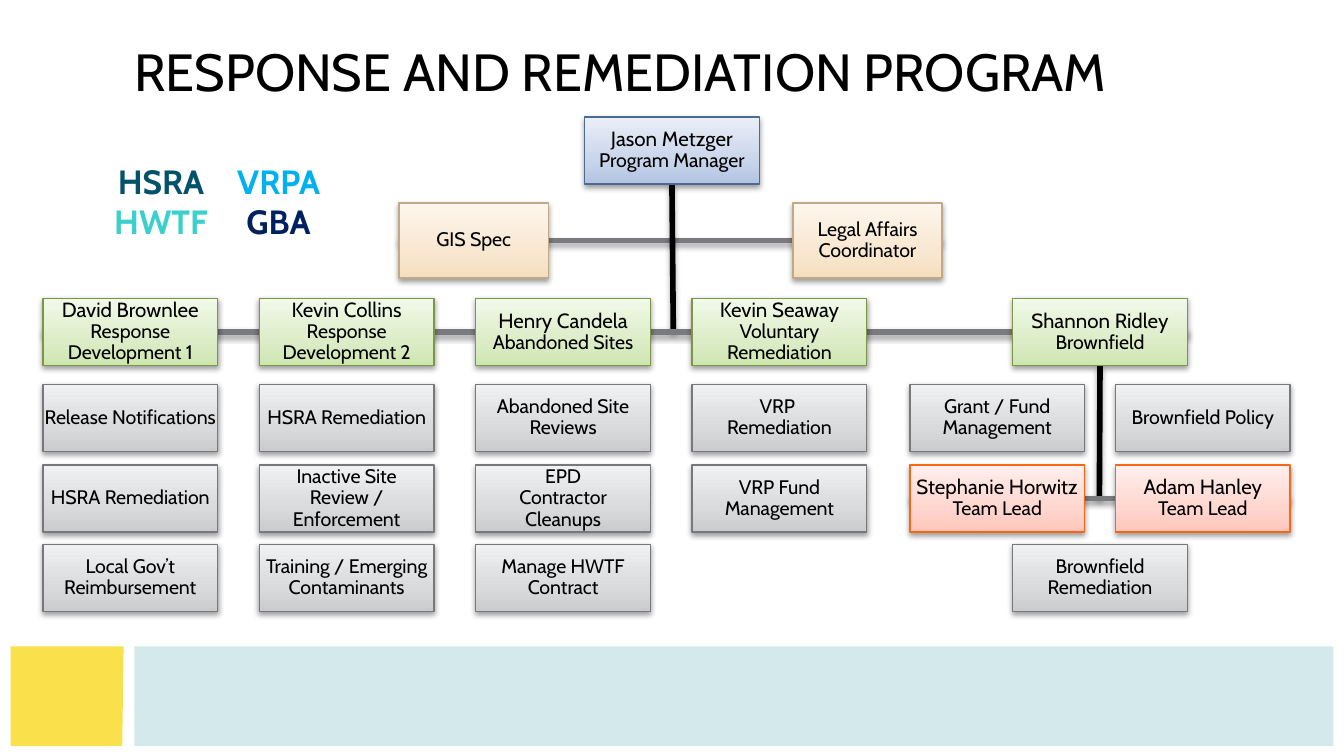
from lxml import etree
from pptx import Presentation
from pptx.dml.color import RGBColor
from pptx.enum.shapes import MSO_CONNECTOR, MSO_SHAPE
from pptx.enum.text import MSO_ANCHOR, PP_ALIGN
from pptx.oxml.ns import qn
from pptx.util import Inches, Pt

RECTANGLE, STRAIGHT = MSO_SHAPE.RECTANGLE, MSO_CONNECTOR.STRAIGHT
MIDDLE, CENTER, LEFT = MSO_ANCHOR.MIDDLE, PP_ALIGN.CENTER, PP_ALIGN.LEFT
LEFT_SIDE, BOTTOM_SIDE, RIGHT_SIDE = 1, 2, 3
FONT = "Cabin"

# Content
TITLE = "RESPONSE AND REMEDIATION PROGRAM"
FUNDS = [("HSRA", "04516C"), ("HWTF", "3CD0CC"), ("VRPA", "00B0F0"), ("GBA", "002060")]
MANAGER = ("Jason Metzger\n", "Program Manager")
STAFF = ["GIS Spec", "Legal Affairs Coordinator"]
UNITS = [
    (("David Brownlee ", "Response Development 1"),
     ["Release Notifications", "HSRA Remediation", "Local Gov’t Reimbursement"]),
    (("Kevin Collins ", "Response Development 2"),
     ["HSRA Remediation", "Inactive Site Review / Enforcement",
      "Training / Emerging Contaminants"]),
    (("Henry Candela ", "Abandoned Sites"),
     ["Abandoned Site Reviews", "EPD\nContractor\nCleanups", "Manage HWTF Contract"]),
    (("Kevin Seaway\n", "Voluntary Remediation"),
     ["VRP \nRemediation", "VRP Fund Management"]),
]
BROWNFIELD_HEAD = ("Shannon Ridley ", "Brownfield")
BROWNFIELD_TASKS = ["Grant / Fund Management", "Brownfield Policy"]
TEAM_LEADS = [("Stephanie Horwitz\n", "Team Lead"), ("Adam Hanley\n", "Team Lead")]
BROWNFIELD_BASE = "Brownfield Remediation"

# Box styles: gradient from bottom to top, then outline
STYLES = {
    "manager": (["B2C3E3", "C9D5EA", "EAEFF8"], "4D6B92"),
    "staff": (["F6DEBD", "F8E7D1", "FDF6EC"], "BFA989"),
    "head": (["CDE6AF", "DCECC7", "F1F9E9"], "7A9746"),
    "task": (["C9CBCD", "D9DADC", "F0F1F2"], "76787B"),
    "lead": (["FFC5BA", "FFD6CF", "FFEFED"], "F96615"),
}
STOPS = [0, 35, 100]

# Layout, in inches
PAGE_W = 10
PAGE_H = PAGE_W * 9 / 16
BOX_W, BOX_H = 1.3, 0.5
STAFF_W, STAFF_H = 1.11, 0.56
LEFT_X, COLUMN_STEP = 0.32, 1.61
HEAD_Y = 2.22
TASK_ROWS = [2.86, 3.46, 4.05]
BROWNFIELD_X, BROWNFIELD_STEP = 6.77, 1.53
BROWNFIELD_MID = BROWNFIELD_X + BROWNFIELD_STEP / 2
BANDS = [
    ([(0.08, 5.55), (0.08, 4.81), (0.92, 4.81), (0.91, 5.55)], "FAE04B", 100),
    ([(1, 5.55), (1, 4.81), (9.92, 4.81), (9.92, 5.55)], "C8E4E8", 80),
]


def color(value):
    return RGBColor.from_string(value)


def element(parent, tag, **attributes):
    return etree.SubElement(parent, qn(tag), {k: str(v) for k, v in attributes.items()})


def add_shadow(effects, opacity, distance):
    shadow = element(effects, "a:outerShdw", blurRad=Pt(3.1), dist=Pt(distance),
                     dir=90 * 60000, rotWithShape=0)
    black = element(shadow, "a:srgbClr", val="000000")
    element(black, "a:alpha", val=opacity * 1000)


def add_span(para, text, size, tint="000000", bold=None):
    for index, line in enumerate(text.split("\n")):
        if index:
            para.add_line_break()
        if line:
            span = para.add_run()
            span.text = line
            span.font.name, span.font.size, span.font.bold = FONT, Pt(size), bold
            span.font.color.rgb = color(tint)


def set_margins(frame, side, end):
    frame.margin_left = frame.margin_right = Inches(side)
    frame.margin_top = frame.margin_bottom = Inches(end)
    frame.vertical_anchor, frame.word_wrap = MIDDLE, True


def add_box(content, style, x, y, width=BOX_W, height=BOX_H):
    stops, outline = STYLES[style]
    box = page.shapes.add_shape(RECTANGLE, Inches(x), Inches(y), Inches(width), Inches(height))
    box.fill.gradient()
    box.fill.gradient_angle = 90
    stop_list = next(box.element.iter(qn("a:gsLst")))
    for old in list(stop_list):
        stop_list.remove(old)
    for position, tint in zip(STOPS, stops):
        element(element(stop_list, "a:gs", pos=position * 1000), "a:srgbClr", val=tint)
    box.line.color.rgb, box.line.width = color(outline), Pt(0.75)
    box.shadow.inherit = False
    add_shadow(box.element.spPr.find(qn("a:effectLst")), 38, 1.6)
    set_margins(box.text_frame, 0.01, 0.01)
    para = box.text_frame.paragraphs[0]
    para.alignment, para.line_spacing = CENTER, 0.9
    if isinstance(content, tuple):
        name, role = content
        add_span(para, name, 11)
        add_span(para, role, 10.5)
    else:
        add_span(para, content, 10.5)
    return box


def add_line(start, end, tint):
    line = page.shapes.add_connector(STRAIGHT, *[Inches(v) for v in (*start, *end)])
    line.line.color.rgb, line.line.width = color(tint), Pt(3)
    add_shadow(element(line.element.spPr, "a:effectLst"), 35, 1.8)
    return line


deck = Presentation()
deck.slide_width, deck.slide_height = Inches(PAGE_W), Inches(PAGE_H)
page = deck.slides.add_slide(deck.slide_layouts[5])

# Title
title = page.shapes.title
title.left, title.top, title.width, title.height = [Inches(v) for v in (0.9, 0.3, 8.22, 0.45)]
title.text_frame.vertical_anchor = MIDDLE
title.text_frame.paragraphs[0].alignment = LEFT
add_span(title.text_frame.paragraphs[0], TITLE, 28)

# Bottom bands
for points, tint, opacity in BANDS:
    corners = [(Inches(x), Inches(y)) for x, y in points]
    builder = page.shapes.build_freeform(*corners[0], scale=1.0)
    builder.add_line_segments(corners[1:], close=True)
    band = builder.convert_to_shape()
    band.fill.solid()
    band.fill.fore_color.rgb = color(tint)
    element(next(band.element.iter(qn("a:srgbClr"))), "a:alpha", val=opacity * 1000)
    band.line.fill.background()
    band.shadow.inherit = False

# Lines lie behind the boxes; their outer ends are joined below
staff_line = add_line((2.97, 1.79), (7.01, 1.79), "797B7E")
brownfield_stem = add_line((8.18, 3.71), (8.18, 2.72), "000000")
manager_stem = add_line((5.01, 2.47), (5, 1.37), "000000")
lead_line = add_line((6.77, 3.71), (9.6, 3.71), "797B7E")
unit_line = add_line((0.32, 2.47), (8.83, 2.47), "797B7E")

# Fund names in two columns
funds_box = page.shapes.add_textbox(Inches(0.69), Inches(1.04), Inches(1.89), Inches(0.91))
funds = funds_box.text_frame
set_margins(funds, 0.07, 0.04)
next(funds_box.element.iter(qn("a:bodyPr"))).set("numCol", "2")
for index, (fund, tint) in enumerate(FUNDS):
    para = funds.add_paragraph() if index else funds.paragraphs[0]
    para.alignment = CENTER
    add_span(para, fund, 18, tint, True)

# Manager and staff
manager = add_box(MANAGER, "manager", 4.35, 0.87)
gis, legal = [add_box(role, "staff", x, 1.51, STAFF_W, STAFF_H)
              for role, x in zip(STAFF, (2.97, 5.9))]

# Units with their tasks
heads = []
for column, (head, tasks) in enumerate(UNITS):
    x = LEFT_X + column * COLUMN_STEP
    heads.append(add_box(head, "head", x, HEAD_Y))
    for task, y in zip(tasks, TASK_ROWS):
        add_box(task, "task", x, y)

# Brownfield unit
brownfield = add_box(BROWNFIELD_HEAD, "head", BROWNFIELD_MID, HEAD_Y)
leads = []
for column, (task, lead) in enumerate(zip(BROWNFIELD_TASKS, TEAM_LEADS)):
    x = BROWNFIELD_X + column * BROWNFIELD_STEP
    add_box(task, "task", x, TASK_ROWS[0])
    leads.append(add_box(lead, "lead", x, TASK_ROWS[1]))
add_box(BROWNFIELD_BASE, "task", BROWNFIELD_MID, TASK_ROWS[2])

# Join the lines to the boxes
for line, first, last in [(staff_line, gis, legal), (lead_line, *leads),
                          (unit_line, heads[0], brownfield)]:
    line.begin_connect(first, LEFT_SIDE)
    line.end_connect(last, RIGHT_SIDE)
manager_stem.end_connect(manager, BOTTOM_SIDE)
brownfield_stem.end_connect(brownfield, BOTTOM_SIDE)

deck.save("out.pptx")
